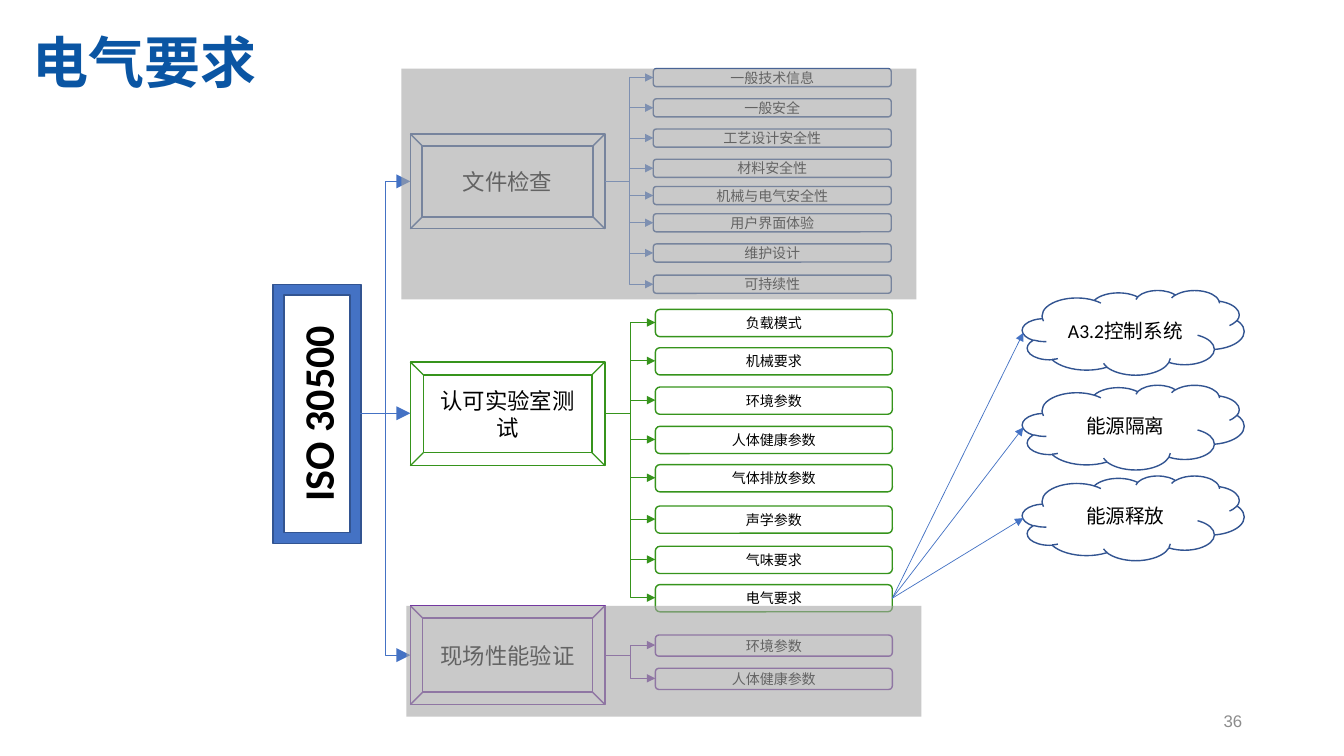
from pptx import Presentation
from pptx.dml.color import RGBColor
from pptx.enum.shapes import MSO_CONNECTOR, MSO_SHAPE
from pptx.enum.text import MSO_ANCHOR, PP_ALIGN
from pptx.oxml.ns import qn
from pptx.oxml.xmlchemy import OxmlElement
from pptx.util import Pt

PX = 9144
BEVEL, FRAME, CLOUD = MSO_SHAPE.BEVEL, MSO_SHAPE.FRAME, MSO_SHAPE.CLOUD
ROUND, RECT = MSO_SHAPE.ROUNDED_RECTANGLE, MSO_SHAPE.RECTANGLE
ELBOW, LINE = MSO_CONNECTOR.ELBOW, MSO_CONNECTOR.STRAIGHT
MIDDLE = MSO_ANCHOR.MIDDLE
LEFT, CENTER, RIGHT = PP_ALIGN.LEFT, PP_ALIGN.CENTER, PP_ALIGN.RIGHT

BLACK = RGBColor(0x00, 0x00, 0x00)
TITLE = RGBColor(0x0A, 0x55, 0xA3)
BLUE = RGBColor(0x44, 0x72, 0xC4)
NAVY = RGBColor(0x32, 0x54, 0x91)
GREEN = RGBColor(0x36, 0x94, 0x1C)
PURPLE = RGBColor(0x70, 0x30, 0xA0)
GRAY = RGBColor(0xA5, 0xA5, 0xA5)
PAGE = RGBColor(0x8C, 0x8C, 0x8C)

GROUPS = [
    ("文件检查", 133, 94, NAVY, BLUE, 648, 236, 18, [
        (68, "一般技术信息"), (98, "一般安全"), (128, "工艺设计安全性"),
        (158, "材料安全性"), (185, "机械与电气安全性"), (212, "用户界面体验"),
        (242, "维护设计"), (273, "可持续性")]),
    ("认可实验室测试", 359, 103, GREEN, GREEN, 650, 235, 27, [
        (307, "负载模式"), (345, "机械要求"), (384, "环境参数"),
        (423, "人体健康参数"), (461, "气体排放参数"), (502, "声学参数"),
        (542, "气味要求"), (580, "电气要求")]),
    ("现场性能验证", 601, 98, PURPLE, PURPLE, 650, 235, 21, [
        (630, "环境参数"), (663, "人体健康参数")]),
]
CLOUDS = [(288, "A3.2控制系统"), (382, "能源隔离"), (472, "能源释放")]


class Board:
    """Draws styled elements on one slide, with lengths in px."""

    def __init__(self, slide):
        self.shapes = slide.shapes

    def set_text(self, frame, text, size, color=BLACK, font="Calibri",
                 bold=False, align=CENTER):
        frame.word_wrap = True
        frame.vertical_anchor = MIDDLE
        para = frame.paragraphs[0]
        para.text = text
        para.alignment = align
        para.font.name = font
        para.font.size = Pt(size)
        para.font.bold = bold
        para.font.color.rgb = color
        return para

    def label(self, box, text, size, color, bold=False, align=LEFT):
        frame = self.shapes.add_textbox(*(n * PX for n in box)).text_frame
        return frame, self.set_text(frame, text, size, color, "Arial", bold, align)

    def shape(self, kind, box, line, text, size, fill=None, bold=False):
        item = self.shapes.add_shape(kind, *(n * PX for n in box))
        item.shadow.inherit = False
        item.fill.background()
        if fill is not None:
            item.fill.solid()
            item.fill.fore_color.rgb = fill
        item.line.color.rgb = line
        item.line.width = Pt(1)
        self.set_text(item.text_frame, text, size, bold=bold)
        return item

    def veil(self, box):
        item = self.shapes.add_shape(RECT, *(n * PX for n in box))
        item.shadow.inherit = False
        item.fill.solid()
        item.fill.fore_color.rgb = GRAY
        item.line.fill.background()
        alpha = OxmlElement("a:alpha")
        alpha.set("val", "60000")
        item._element.spPr.find(".//" + qn("a:srgbClr")).append(alpha)

    def arrow(self, kind, start, end, color, head="med"):
        link = self.shapes.add_connector(kind, *(n * PX for n in start + end))
        link.line.color.rgb = color
        link.line.width = Pt(0.5)
        tail = OxmlElement("a:tailEnd")
        for key, val in (("type", "triangle"), ("w", head), ("len", head)):
            tail.set(key, val)
        props = link._element.spPr
        props.find(qn("a:ln")).append(tail)
        props.append(OxmlElement("a:effectLst"))
        return link


def main():
    deck = Presentation()
    deck.slide_width, deck.slide_height = 1333 * PX, 750 * PX
    board = Board(deck.slides.add_slide(deck.slide_layouts[6]))

    frame, para = board.label((32, 15, 1224, 99), "电气要求", 40, TITLE, True)
    frame.margin_left = frame.margin_right = 0
    frame.margin_top = frame.margin_bottom = 0
    para.line_spacing = 0.9

    root = board.shape(FRAME, (271, 282, 87, 257), NAVY, "ISO 30500", 30, BLUE, True)
    root.text_frame._txBody.bodyPr.set("vert", "vert270")

    for name, top, high, edge, wire, left, wide, tall, rows in GROUPS:
        mid = top + high // 2
        board.shape(BEVEL, (407, top, 193, high), edge, name, 16)
        board.arrow(ELBOW, (357, 410), (407, mid), BLUE, "lg")
        for y, text in rows:
            board.arrow(ELBOW, (600, mid), (left, y + tall // 2), wire)
            last = board.shape(ROUND, (left, y, wide, tall), edge, text, 10)
        if edge == GREEN:
            source = last

    for top, text in CLOUDS:
        board.shape(CLOUD, (1014, top, 220, 84), NAVY, text, 14)
        link = board.arrow(LINE, (885, 593), (1015, top + 42), BLUE)
        link.begin_connect(source, 3)

    board.label((942, 695, 300, 40), "36", 12, PAGE, align=RIGHT)
    board.veil((398, 68, 511, 229))
    board.veil((403, 601, 511, 110))
    deck.save("out.pptx")


if __name__ == "__main__":
    main()
